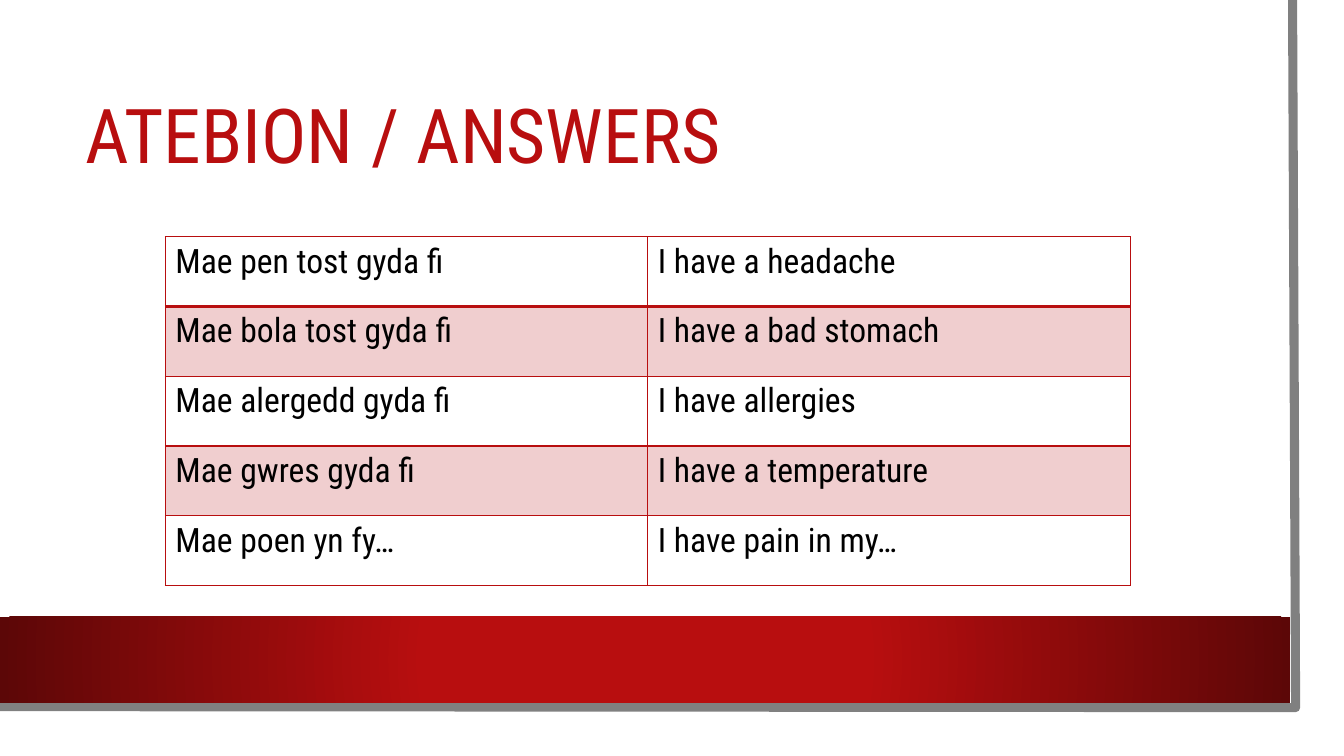
from lxml import etree
from pptx import Presentation
from pptx.dml.color import RGBColor
from pptx.enum.shapes import MSO_SHAPE
from pptx.enum.text import MSO_ANCHOR, PP_ALIGN
from pptx.oxml import parse_xml
from pptx.oxml.ns import qn
from pptx.util import Inches, Pt

RECTANGLE = MSO_SHAPE.RECTANGLE
MIDDLE = MSO_ANCHOR.MIDDLE
LEFT = PP_ALIGN.LEFT

RED = RGBColor(0xB8, 0x0E, 0x0F)
DARK_RED = RGBColor(0x5C, 0x07, 0x07)
GREY = RGBColor(0x80, 0x80, 0x80)
WHITE = RGBColor(0xFF, 0xFF, 0xFF)
BLACK = RGBColor(0, 0, 0)

FONT = "Roboto Condensed"
TITLE_FORMAT = {"name": FONT, "size": Pt(54), "bold": False}
CELL_FORMAT = {"name": FONT, "size": Pt(24), "bold": False}
DRAWING_NS = "http://schemas.openxmlformats.org/drawingml/2006/main"

ANSWERS = [
    ("Mae pen tost gyda fi", "I have a headache"),
    ("Mae bola tost gyda fi", "I have a bad stomach"),
    ("Mae alergedd gyda fi", "I have allergies"),
    ("Mae gwres gyda fi", "I have a temperature"),
    ("Mae poen yn fy…", "I have pain in my…"),
]


def format_font(font, values, colour):
    for attribute, value in values.items():
        setattr(font, attribute, value)
    font.color.rgb = colour


def add_panel(slide, left, top, width, height):
    panel = slide.shapes.add_shape(
        RECTANGLE, Inches(left), Inches(top), Inches(width), Inches(height))
    panel.shadow.inherit = False
    panel.line.fill.background()
    panel.fill.solid()
    panel.fill.fore_color.rgb = WHITE
    return panel


def add_page(slide, left, top, width, height):
    # White sheet
    add_panel(slide, left, top, width, height)

    # Grey edge along the right and bottom of the sheet
    right, bottom = left + width - 0.25, top + height - 0.25
    builder = slide.shapes.build_freeform(Inches(right - 0.03), Inches(top))
    builder.add_line_segments(
        [(Inches(right), Inches(bottom)),
         (Inches(left - 0.03), Inches(bottom - 0.01))], close=False)
    edge = builder.convert_to_shape()
    edge.shadow.inherit = False
    edge.fill.background()
    edge.line.color.rgb = GREY
    edge.line.width = Pt(6.5)


def add_band(slide, left, top, width, height):
    band = add_panel(slide, left, top, width, height)
    gradient = parse_xml(
        f'<a:gradFill xmlns:a="{DRAWING_NS}" rotWithShape="1"><a:gsLst>'
        f'<a:gs pos="34000"><a:srgbClr val="{RED}"/></a:gs>'
        f'<a:gs pos="100000"><a:srgbClr val="{DARK_RED}"/></a:gs></a:gsLst>'
        '<a:path path="circle"><a:fillToRect l="50000" t="50000" r="50000" b="50000"/>'
        '</a:path></a:gradFill>')
    properties = band.fill._xPr
    properties.replace(properties.find(qn("a:solidFill")), gradient)


def add_title(slide, left, top, width, height):
    title = slide.shapes.title
    title.left, title.top = Inches(left), Inches(top)
    title.width, title.height = Inches(width), Inches(height)
    frame = title.text_frame
    frame.text = "ATEBION / ANSWERS"
    frame.vertical_anchor = MIDDLE
    heading = frame.paragraphs[0]
    heading.alignment = LEFT
    heading.line_spacing = 0.9
    format_font(heading.runs[0].font, TITLE_FORMAT, RED)
    # Bring the title in front of the sheet
    slide.shapes._spTree.append(title._element)


def set_borders(cell, bottom_points, top_points):
    properties = cell._tc.get_or_add_tcPr()
    widths = {"lnL": 1, "lnR": 1, "lnT": top_points, "lnB": bottom_points}
    for position, (side, points) in enumerate(widths.items()):
        line = etree.Element(qn(f"a:{side}"), w=str(Pt(points)))
        fill = etree.SubElement(line, qn("a:solidFill"))
        etree.SubElement(fill, qn("a:srgbClr"), val=str(RED))
        properties.insert(position, line)


def add_answers(slide, left, top, width, height):
    answers = slide.shapes.add_table(
        len(ANSWERS), 2, Inches(left), Inches(top), Inches(width), Inches(height)).table
    answers.first_row = False
    answers.horz_banding = False
    for row, phrases in enumerate(ANSWERS):
        for column, phrase in enumerate(phrases):
            cell = answers.cell(row, column)
            cell.text = phrase
            format_font(cell.text_frame.paragraphs[0].runs[0].font, CELL_FORMAT, BLACK)
            # Every second row is tinted with see-through red
            if row % 2:
                cell.fill.solid()
                cell.fill.fore_color.rgb = RED
                tint = cell._tc.tcPr.find(".//" + qn("a:srgbClr"))
                etree.SubElement(tint, qn("a:alpha"), val="20000")
            else:
                cell.fill.background()
            # A heavier rule follows the first row
            set_borders(cell, 2 if row == 0 else 1, 2 if row == 1 else 1)


def main():
    presentation = Presentation()
    presentation.slide_width = Inches(13.33)
    presentation.slide_height = Inches(7.5)
    slide = presentation.slides.add_slide(presentation.slide_layouts[5])
    add_page(slide, 0, 0, 13.1, 7.27)
    add_band(slide, 0, 6.12, 12.8, 0.85)
    add_title(slide, 0.75, 0.75, 11.37, 1.26)
    add_answers(slide, 1.64, 2.35, 9.57, 3.46)
    presentation.save("out.pptx")


if __name__ == "__main__":
    main()
